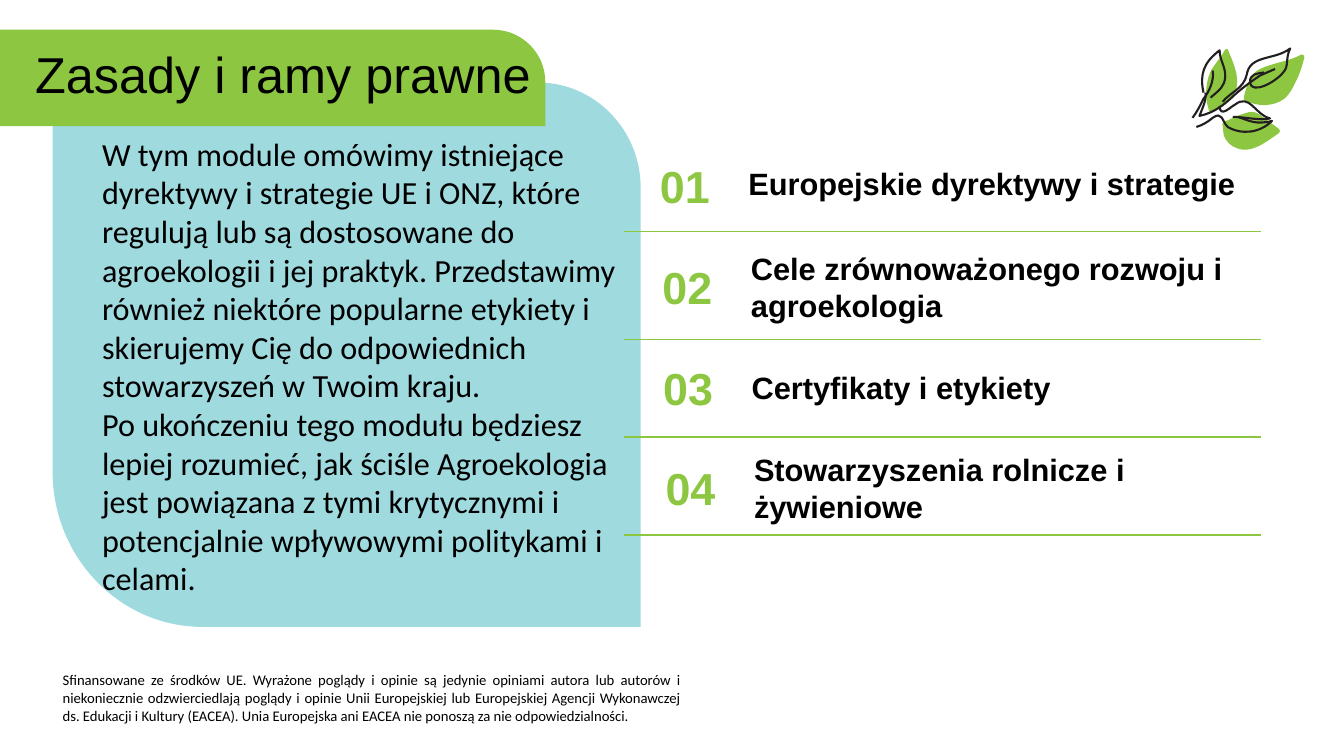
from lxml import etree
from pptx import Presentation
from pptx.dml.color import RGBColor
from pptx.enum.shapes import MSO_CONNECTOR
from pptx.enum.text import MSO_ANCHOR, PP_ALIGN
from pptx.oxml.ns import qn
from pptx.util import Pt

LEFT, CENTER, JUSTIFY = PP_ALIGN.LEFT, PP_ALIGN.CENTER, PP_ALIGN.JUSTIFY
TOP, MIDDLE = MSO_ANCHOR.TOP, MSO_ANCHOR.MIDDLE
STRAIGHT = MSO_CONNECTOR.STRAIGHT

COLORS = {"green": "8DC641", "teal": "9FDADF", "black": "000000", "ink": "231F20"}

# Content
TITLE = "Zasady i ramy prawne"
INTRO = [
    "W tym module omówimy istniejące dyrektywy i strategie UE i ONZ, które "
    "regulują lub są dostosowane do agroekologii i jej praktyk. Przedstawimy "
    "również niektóre popularne etykiety i skierujemy Cię do odpowiednich "
    "stowarzyszeń w Twoim kraju.",
    "Po ukończeniu tego modułu będziesz lepiej rozumieć, jak ściśle "
    "Agroekologia jest powiązana z tymi krytycznymi i potencjalnie wpływowymi "
    "politykami i celami.",
]
# Label, left of the number, label width, line spacing
TOPICS = [
    ("Europejskie dyrektywy i strategie", 461.5, 371.5, 0.9),
    ("Cele zrównoważonego rozwoju i agroekologia", 463.3, 351.4, 1.0),
    ("Certyfikaty i etykiety", 463.8, 351.4, 1.0),
    ("Stowarzyszenia rolnicze i żywieniowe", 465.5, 351.4, 1.0),
]
FUNDING = (
    "Sfinansowane ze środków UE. Wyrażone poglądy i opinie są jedynie opiniami "
    "autora lub autorów i niekoniecznie odzwierciedlają poglądy i opinie Unii "
    "Europejskiej lub Europejskiej Agencji Wykonawczej ds. Edukacji i Kultury "
    "(EACEA). Unia Europejska ani EACEA nie ponoszą za nie odpowiedzialności."
)
DIVIDER_TOPS = [165.3, 242.6, 312.1, 382.3]

# Outlines: two numbers are a corner, six are a Bézier curve
PANEL = [
    (457.6, 447.8), (144.7, 447.8), (85.7, 447.8, 37.6, 398.2, 37.6, 337),
    (37.6, 59), (384.5, 59), (424.8, 59, 457.6, 92.9, 457.6, 133.9),
]
BANNER = [
    (-1.4, 21.2), (352.1, 21.2), (373, 21.2, 389.5, 38.2, 389.5, 58.3),
    (389.5, 90), (0, 90), (0, 34.6), (0, 31.7, 0, 29.5, -0.7, 26.6),
]
LEAVES = [
    [(867.6, 79.2), (874.8, 75.6, 882, 69.8, 883.4, 61.9),
     (884.9, 53.3, 880.6, 43.9, 877, 35.3), (877, 34.6, 874.8, 34.6, 874.8, 36),
     (872.6, 40.3, 869.8, 43.2, 866.9, 47.5), (864.7, 50.4, 863.3, 54, 862.6, 57.6),
     (861.1, 64.1, 861.1, 71.3, 863.3, 77.8), (862.6, 78.5, 864, 80.6, 865.4, 79.9)],
    [(917.3, 70.6), (921.6, 67, 923.8, 61.9, 925.9, 57.6),
     (928.8, 51.8, 930.2, 46.8, 931.7, 41), (931.7, 39.6, 931, 38.9, 929.5, 38.9),
     (924.5, 41.8, 919.4, 43.2, 913.7, 44.6), (909.4, 46.1, 905, 46.8, 900.7, 49),
     (897.1, 50.4, 894.2, 53.3, 892.8, 56.9), (890.6, 61.2, 889.2, 65.5, 888.5, 69.8),
     (887.8, 71.3, 888.5, 72, 889.9, 72), (898.6, 76.3, 909.4, 76.3, 917.3, 70.6)],
    [(913.7, 95), (914.4, 94.3, 914.4, 92.9, 913.7, 92.2),
     (910.1, 89.3, 906.5, 87.1, 902.9, 84.2), (900, 82.1, 897.8, 79.9, 894.2, 79.9),
     (891.4, 79.9, 888.5, 81.4, 885.6, 82.1), (882.7, 83.5, 879.8, 84.2, 877.7, 85.7),
     (875, 86.4, 872, 87.5, 873.4, 90), (873.4, 92.2, 874.1, 95, 874.1, 96.5),
     (875.5, 100.8, 879.1, 104.4, 883.4, 105.8), (894.2, 110.2, 905, 100.8, 913.7, 95)],
]
LEAF_STROKES = [
    [(859.7, 66.2), (856.8, 53.3, 859.7, 44.6, 871.2, 36),
     (871.2, 43.2, 875.5, 47.5, 875.2, 54.7), (874.8, 61.9, 871.2, 64.1, 864.7, 69.8)],
    [(866.2, 50.4), (867.6, 57.6, 863.3, 66.2, 859.7, 70.6),
     (857, 76, 855, 80, 851.8, 84.2)],
    [(861.1, 66.2), (861.8, 72, 859, 77, 856.8, 82.8),
     (867.6, 80.6, 874.8, 74.2, 879.8, 69.8), (885.6, 64.1, 892.8, 59, 900, 54),
     (910.8, 49.3)],
    [(873.4, 72.7), (878.4, 66.2, 888.5, 63.4, 890.6, 53.3),
     (892.8, 38.9, 910.8, 43.2, 921.6, 34.6), (918, 41.8, 920.9, 47.5, 916.6, 51.8),
     (910.8, 59, 894.2, 67.7, 892.8, 59), (892.8, 52.6, 897.8, 52.6, 902.9, 51.8)],
    [(871.2, 75.6), (871.2, 85, 879.8, 75.6, 882, 74.9),
     (892.8, 66.2, 896.4, 82.1, 907.2, 84.6), (900, 86.4, 889.2, 83.5, 880.6, 83.5)],
    [(884.2, 83.5), (892.8, 86.4, 897.1, 89.3, 908.6, 86.4),
     (900, 95, 887, 96.5, 877, 90.7), (872.6, 86.4, 873.4, 79.2, 866.2, 84.2),
     (861.8, 87.8, 859, 89.3, 854.6, 90.7)],
]


def color(name):
    return RGBColor.from_string(COLORS[name])


def segment_points(segment):
    return [(Pt(x), Pt(y)) for x, y in zip(segment[::2], segment[1::2])]


def bend_curves(shape, outlines):
    """Merge the three points of each curve into one Bézier element."""
    lines = shape._element.iter(qn("a:lnTo"))
    lines = iter(list(lines))
    for outline in outlines:
        for segment in outline[1:]:
            curve = next(lines)
            if len(segment) == 6:
                curve.tag = qn("a:cubicBezTo")
                for _ in range(2):
                    control = next(lines)
                    curve.append(control[0])
                    control.getparent().remove(control)


def add_outlines(slide, outlines, fill=None, stroke=None):
    """Draw all outlines as one freeform."""
    builder = slide.shapes.build_freeform(*segment_points(outlines[0][0])[0])
    for index, outline in enumerate(outlines):
        if index:
            builder.move_to(*segment_points(outline[0])[0])
        points = [point for segment in outline[1:] for point in segment_points(segment)]
        builder.add_line_segments(points, close=fill is not None)
    shape = builder.convert_to_shape()
    bend_curves(shape, outlines)
    shape.shadow.inherit = False
    if fill:
        shape.fill.solid()
        shape.fill.fore_color.rgb = color(fill)
    else:
        shape.fill.background()
    if stroke:
        shape.line.color.rgb = color(stroke)
        shape.line.width = Pt(1.5)
    else:
        shape.line.fill.background()


def add_text(slide, box, lines, font, size, name="black", bold=False,
             align=LEFT, anchor=MIDDLE, spacing=1.0):
    frame = slide.shapes.add_textbox(*(Pt(value) for value in box)).text_frame
    frame.word_wrap = True
    frame.vertical_anchor = anchor
    for index, line in enumerate(lines):
        paragraph = frame.add_paragraph() if index else frame.paragraphs[0]
        paragraph.text = line
        paragraph.alignment = align
        paragraph.line_spacing = spacing
        paragraph.font.name = font
        paragraph.font.size = Pt(size)
        paragraph.font.bold = bold
        paragraph.font.color.rgb = color(name)


def add_divider(slide, top):
    line = slide.shapes.add_connector(STRAIGHT, Pt(900.7), Pt(top), Pt(445.7), Pt(top))
    line.line.color.rgb = color("green")
    line.line.width = Pt(1)
    etree.SubElement(line._element.spPr, qn("a:effectLst"))


def main():
    presentation = Presentation()
    presentation.slide_width, presentation.slide_height = Pt(960), Pt(540)
    slide = presentation.slides.add_slide(presentation.slide_layouts[6])

    # Background panel, title banner and dividers
    add_outlines(slide, [PANEL], fill="teal")
    add_outlines(slide, [BANNER], fill="green")
    for top in DIVIDER_TOPS:
        add_divider(slide, top)

    # Funding note, introduction and title
    add_text(slide, (37.7, 475.9, 455.8, 47.5), [FUNDING], "Calibri", 10.5,
             align=JUSTIFY, anchor=TOP)
    add_text(slide, (65.8, 92.2, 387.4, 313.9), INTRO, "Calibri", 23, anchor=TOP)
    add_text(slide, (18, 23.8, 374.4, 56.9), [TITLE], "Arial", 36)

    # Numbered topics
    for row, (label, left, width, spacing) in enumerate(TOPICS):
        top = 105.5 + 72 * row
        add_text(slide, (left, top, 55.4, 54), [f"{row + 1:02}"], "Arial", 32,
                 "green", bold=True, align=CENTER)
        add_text(slide, (left + 66, top, width, 54), [label], "Arial", 22,
                 bold=True, spacing=spacing)

    # Leaf decoration
    for leaf in LEAVES:
        add_outlines(slide, [leaf], fill="green")
    add_outlines(slide, LEAF_STROKES, stroke="ink")

    presentation.save("out.pptx")


if __name__ == "__main__":
    main()
